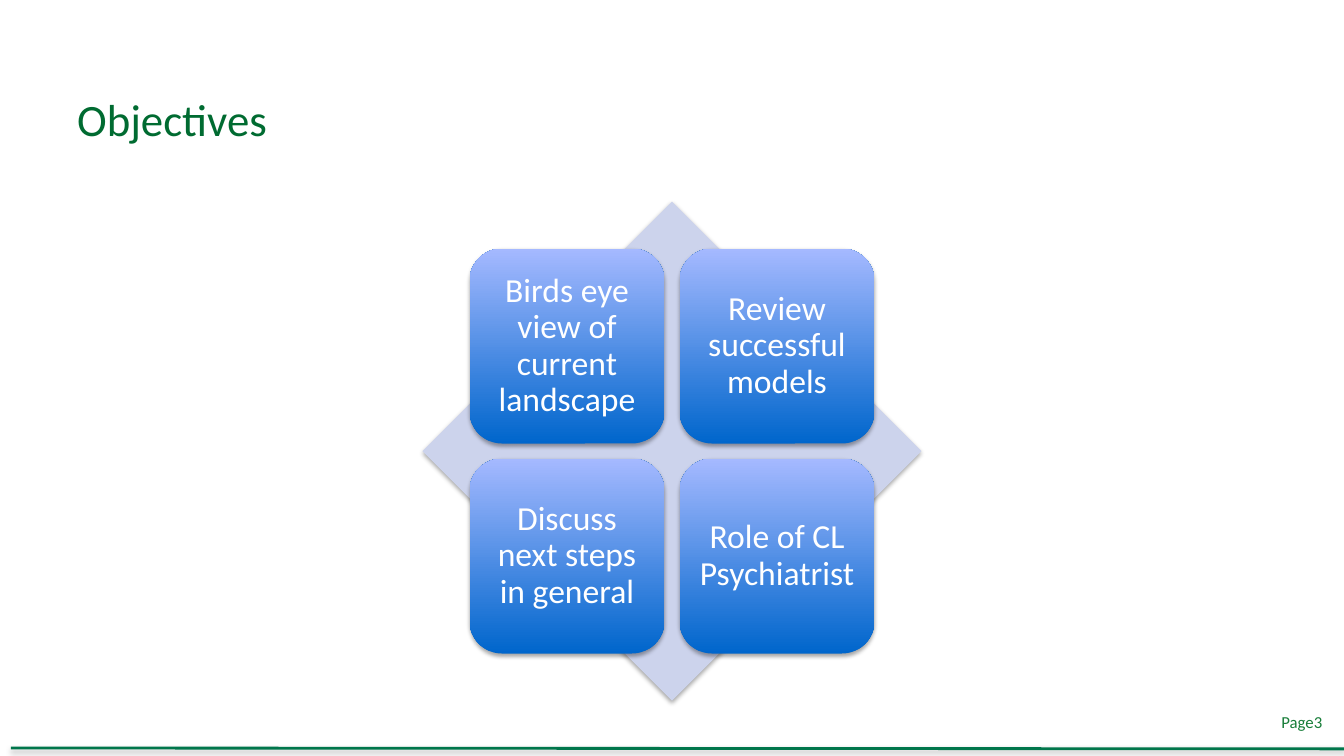
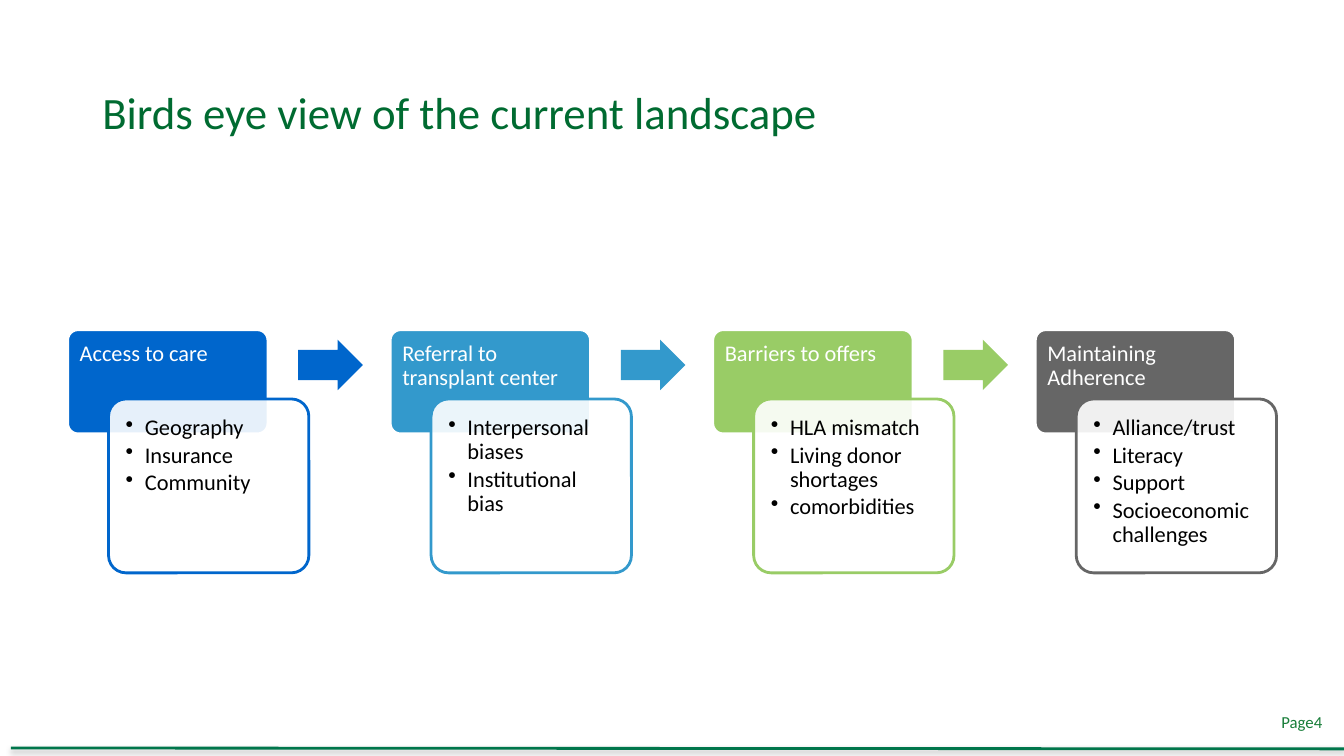
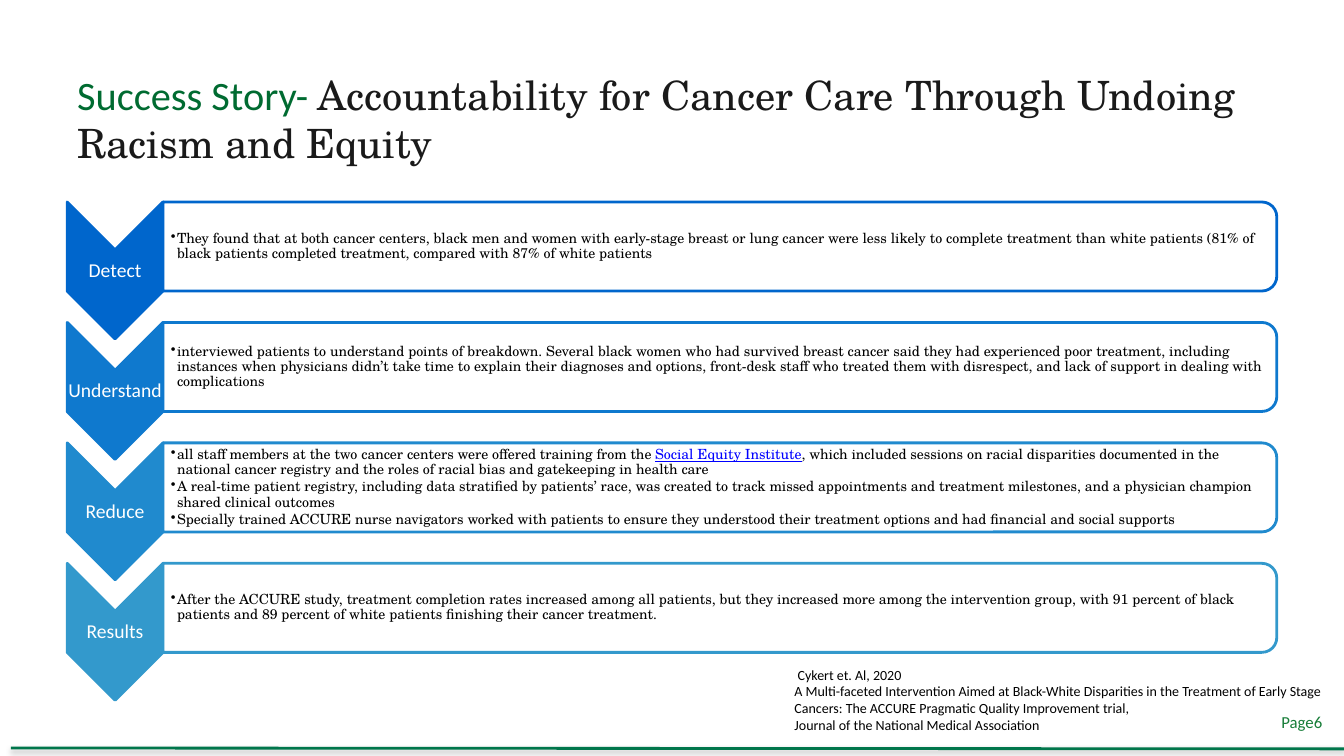
import lxml.etree
import pptx
import pptx.dml.color
import pptx.enum.shapes
import pptx.enum.text
import pptx.oxml.ns
import pptx.util

SHAPE = pptx.enum.shapes.MSO_SHAPE
ALIGN = pptx.enum.text.PP_ALIGN
ANCHOR = pptx.enum.text.MSO_ANCHOR
COLUMNS, ROWS = 160, 90


class Theme:
    sans, serif = "Calibri", "TeX Gyre Schola"
    white, black, rule, diamond = "FFFFFF", "000000", "00764B", "CCD3EC"
    blue, sky, lime, grey = "0066CC", "3399CC", "99CC66", "666666"
    gradient = (blue, "A5B9FF")
    steps = (blue, "0F79CE", "208ACE", sky)
    text = {
        "title": {"name": sans, "size": 32, "color": "006B31"},
        "story": {"name": sans, "size": 28.8, "color": "006B31"},
        "story name": {"name": serif, "size": 28.8, "color": "1A1A1A"},
        "page": {"name": sans, "size": 12, "color": "177D38"},
        "tile": {"name": sans, "size": 24, "color": white},
        "header": {"name": sans, "size": 16, "color": white},
        "list": {"name": sans, "size": 16, "color": black},
        "step": {"name": sans, "size": 14, "color": white},
        "detail": {"name": serif, "size": 10, "color": black},
        "linked": {"name": serif, "size": 10, "color": "0000FF", "underline": True},
        "source": {"name": sans, "size": 10, "color": black},
    }


def rgb(value):
    return pptx.dml.color.RGBColor.from_string(value)


def add_xml(parent, tag, **attributes):
    element = lxml.etree.SubElement(parent, pptx.oxml.ns.qn(tag))
    for name, value in attributes.items():
        element.set(name, str(value))
    return element


class SlideBuilder:
    """Hold the theme and the current slide, and draw elements on a 160 by 90 grid."""

    def __init__(self, deck, theme):
        self.deck, self.theme = deck, theme
        self.slide = None

    def across(self, columns):
        return round(self.deck.slide_width * columns / COLUMNS)

    def down(self, rows):
        return round(self.deck.slide_height * rows / ROWS)

    def frame(self, left, top, width, height):
        return self.across(left), self.down(top), self.across(width), self.down(height)

    def new_slide(self, page):
        self.slide = self.deck.slides.add_slide(self.deck.slide_layouts[6])
        self.text((149.6, 84.1, 9, 4.8), [f"Page{page}"], "page", align=ALIGN.RIGHT)
        rule = self.slide.shapes.add_connector(
            pptx.enum.shapes.MSO_CONNECTOR.STRAIGHT,
            self.across(1.3), self.down(89.05), self.across(COLUMNS), self.down(89.15))
        rule.line.color.rgb = rgb(self.theme.rule)
        rule.line.width = pptx.util.Pt(2)
        self.shadow(add_xml(rule._element.spPr, "a:effectLst"), 38, 1.6)

    def shadow(self, effects, opacity, distance):
        outer = add_xml(effects, "a:outerShdw", blurRad=pptx.util.Pt(3.1),
                        dist=pptx.util.Pt(distance), dir=5400000, rotWithShape=0)
        color = add_xml(outer, "a:srgbClr", val=self.theme.black)
        add_xml(color, "a:alpha", val=opacity * 1000)

    def shape(self, kind, frame, fill, line=None, adjust=(), opacity=100,
              turned=False, shadow=False):
        left, top, width, height = self.frame(*frame)
        if turned:
            left, top = left + (width - height) // 2, top + (height - width) // 2
            width, height = height, width
        box = self.slide.shapes.add_shape(kind, left, top, width, height)
        box.rotation = 90 if turned else 0
        for index, value in enumerate(adjust):
            box.adjustments[index] = value
        box.shadow.inherit = False
        if isinstance(fill, tuple):
            box.fill.gradient()
            box.fill.gradient_angle = 90
            for stop, color in zip(box.fill.gradient_stops, fill):
                stop.color.rgb = rgb(color)
        else:
            box.fill.solid()
            box.fill.fore_color.rgb = rgb(fill)
        if opacity < 100:
            color = box._element.spPr.find(".//" + pptx.oxml.ns.qn("a:srgbClr"))
            add_xml(color, "a:alpha", val=opacity * 1000)
        if line:
            box.line.color.rgb = rgb(line)
            box.line.width = pptx.util.Pt(2)
        else:
            box.line.fill.background()
        if shadow:
            effects = box._element.spPr.find(pptx.oxml.ns.qn("a:effectLst"))
            self.shadow(effects, 35, 1.8)
        return box

    def text(self, frame, paragraphs, style, **layout):
        box = self.slide.shapes.add_textbox(*self.frame(*frame))
        self.set_text(box, paragraphs, style, **layout)

    def set_text(self, box, paragraphs, style, align=ALIGN.LEFT, anchor=ANCHOR.TOP,
                 insets=(0.1, 0.05, 0.1, 0.05), spacing=1, bullet=0):
        body = box.text_frame
        body.word_wrap = True
        body.vertical_anchor = anchor
        for side, inset in zip(("left", "top", "right", "bottom"), insets):
            setattr(body, f"margin_{side}", pptx.util.Inches(inset))
        for index, content in enumerate(paragraphs):
            para = body.add_paragraph() if index else body.paragraphs[0]
            if bullet:
                properties = para._p.get_or_add_pPr()
                properties.set("marL", str(pptx.util.Inches(bullet)))
                properties.set("indent", str(-pptx.util.Inches(bullet)))
                add_xml(properties, "a:buChar", char="•")
                para.space_after = pptx.util.Pt(0.15 * self.theme.text[style]["size"])
            para.alignment = align
            para.line_spacing = spacing
            spans = [(content, style)] if isinstance(content, str) else content
            for words, span_style in spans:
                self.span(para, words, span_style)

    def span(self, para, words, style):
        span = para.add_run()
        span.text = words
        values = dict(self.theme.text[style])
        span.font.color.rgb = rgb(values.pop("color"))
        values["size"] = pptx.util.Pt(values["size"])
        for name, value in values.items():
            setattr(span.font, name, value)

    def title(self, content, frame=(8, 6.6, 144, 15)):
        self.text(frame, [content], "title", anchor=ANCHOR.MIDDLE)

    def tile(self, frame, words):
        box = self.shape(SHAPE.ROUNDED_RECTANGLE, frame, self.theme.gradient, shadow=True)
        self.set_text(box, [words], "tile", align=ALIGN.CENTER, anchor=ANCHOR.MIDDLE,
                      insets=(0.1,) * 4, spacing=0.9)

    def stage(self, left, name, points, color):
        header = self.shape(SHAPE.ROUNDED_RECTANGLE, (left, 39.25, 23.85, 12.4), color,
                            self.theme.white, adjust=[0.1])
        self.set_text(header, [name], "header", insets=(0.09,) * 4, spacing=0.9)
        card = self.shape(SHAPE.ROUNDED_RECTANGLE, (left + 4.87, 47.5, 23.85, 20.7),
                          self.theme.white, color, adjust=[0.1], opacity=90)
        self.set_text(card, points, "list", insets=(0.12,) * 4, spacing=0.9, bullet=0.19)

    def arrow(self, left, color):
        self.shape(SHAPE.RIGHT_ARROW, (left, 40.45, 7.7, 6), color, adjust=[0.6, 0.5])

    def step(self, top, name, details, color):
        self.shape(SHAPE.CHEVRON, (8, top, 11.4, 16.3), color, color, turned=True)
        self.text((8, top + 5.75, 11.4, 4.9), [name], "step", align=ALIGN.CENTER,
                  anchor=ANCHOR.MIDDLE, insets=(0,) * 4, spacing=0.9)
        self.shape(SHAPE.ROUND_2_SAME_RECTANGLE, (19.4, top, 132.6, 10.6),
                   self.theme.white, color, opacity=90, turned=True)
        self.text((19.4, top, 132.1, 10.6), details, "detail", anchor=ANCHOR.MIDDLE,
                  insets=(0.08, 0.01, 0.01, 0.01), spacing=0.9, bullet=0.06)


def objectives(builder):
    builder.new_slide(3)
    builder.title("Objectives")
    builder.shape(SHAPE.DIAMOND, (50.3, 24, 59.4, 59.4), builder.theme.diamond, shadow=True)
    goals = ("Birds eye view of current landscape", "Review successful models",
             "Discuss next steps in general", "Role of CL Psychiatrist")
    size, pitch = 23.2, 25
    for index, goal in enumerate(goals):
        row, column = divmod(index, 2)
        builder.tile((55.9 + column * pitch, 29.6 + row * pitch, size, size), goal)


def landscape(builder):
    theme = builder.theme
    builder.new_slide(4)
    builder.title("Birds eye view of the current landscape", (11, 4.55, 138, 17.4))
    stages = (
        ("Access to care", ["Geography", "Insurance", "Community"], theme.blue),
        ("Referral to transplant center",
         ["Interpersonal biases", "Institutional bias"], theme.sky),
        ("Barriers to offers",
         ["HLA mismatch", "Living donor shortages", "comorbidities"], theme.lime),
        ("Maintaining Adherence",
         ["Alliance/trust", "Literacy", "Support", "Socioeconomic challenges"], theme.grey),
    )
    for index, (name, points, color) in enumerate(stages):
        left = 8.05 + index * 38.4
        builder.stage(left, name, points, color)
        if index < len(stages) - 1:
            builder.arrow(left + 27.45, color)


def success_story(builder):
    builder.new_slide(6)
    builder.title([
        ("Success Story- ", "story"),
        ("Accountability for Cancer Care Through Undoing Racism and Equity", "story name"),
    ])
    steps = (
        ("Detect", [
            "They found that at both cancer centers, black men and women with early-stage "
            "breast or lung cancer were less likely to complete treatment than white patients "
            "(81% of black patients completed treatment, compared with 87% of white patients"]),
        ("Understand", [
            "interviewed patients to understand points of breakdown. Several black women who "
            "had survived breast cancer said they had experienced poor treatment, including "
            "instances when physicians didn’t take time to explain their diagnoses and "
            "options, front-desk staff who treated them with disrespect, and lack of support "
            "in dealing with complications"]),
        ("Reduce", [
            [("all staff members at the two cancer centers were offered training from the ",
              "detail"),
             ("Social Equity Institute", "linked"),
             (", which included sessions on racial disparities documented in the national "
              "cancer registry and the roles of racial bias and gatekeeping in health care",
              "detail")],
            "A real-time patient registry, including data stratified by patients’ race, was "
            "created to track missed appointments and treatment milestones, and a physician "
            "champion shared clinical outcomes",
            "Specially trained ACCURE nurse navigators worked with patients to ensure they "
            "understood their treatment options and had financial and social supports"]),
        ("Results", [
            "After the ACCURE study, treatment completion rates increased among all patients, "
            "but they increased more among the intervention group, with 91 percent of black "
            "patients and 89 percent of white patients finishing their cancer treatment."]),
    )
    for index, ((name, details), color) in enumerate(zip(steps, builder.theme.steps)):
        builder.step(24.05 + index * 14.34, name, details, color)
    builder.text((93.4, 78.7, 66.6, 9.2), [
        " Cykert et. Al, 2020",
        "A Multi-faceted Intervention Aimed at Black-White Disparities in the Treatment of "
        "Early Stage Cancers: The ACCURE Pragmatic Quality Improvement trial,",
        "Journal of the National Medical Association",
    ], "source")


def main():
    deck = pptx.Presentation()
    deck.slide_width = pptx.util.Inches(13.33)
    deck.slide_height = pptx.util.Inches(7.5)
    builder = SlideBuilder(deck, Theme())
    for build in (objectives, landscape, success_story):
        build(builder)
    deck.save("out.pptx")


if __name__ == "__main__":
    main()
